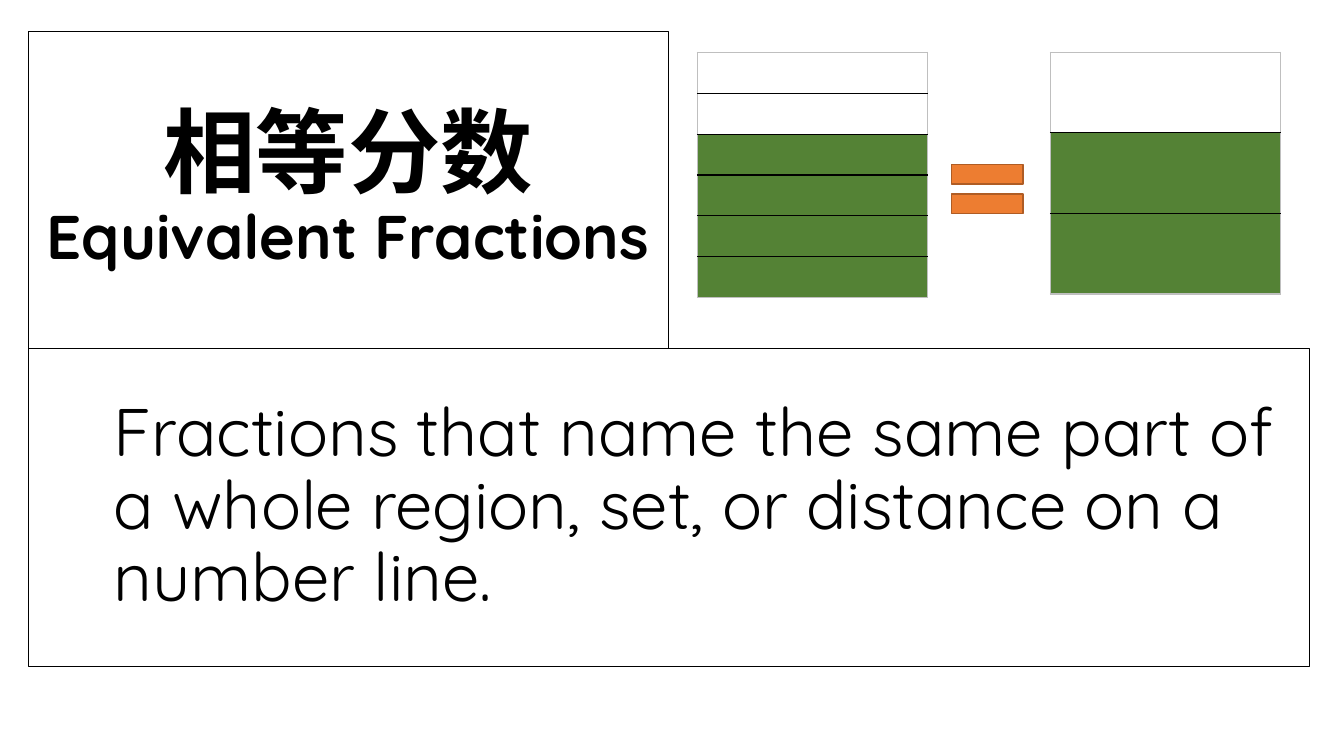
import pptx
import pptx.dml.color
import pptx.enum.shapes
import pptx.enum.text
import pptx.oxml
import pptx.oxml.ns
import pptx.util
from pptx.util import Cm

BLACK = pptx.dml.color.RGBColor(0x00, 0x00, 0x00)
GREY = pptx.dml.color.RGBColor(0xBF, 0xBF, 0xBF)
GREEN = pptx.dml.color.RGBColor(0x54, 0x82, 0x35)
ORANGE = pptx.dml.color.RGBColor(0xED, 0x7D, 0x31)
BROWN = pptx.dml.color.RGBColor(0xAF, 0x5C, 0x24)


def write_span(para, text, size, font="Quicksand", bold=False):
    span = para.add_run()
    span.text = text
    span.font.size = pptx.util.Pt(size)
    span.font.name = font
    span.font.bold = bold
    span.font.color.rgb = BLACK


def add_border(cell, side, color):
    """Draw one edge of a cell; side is L, R, T or B."""
    cell._tc.get_or_add_tcPr().append(pptx.oxml.parse_xml(
        f'<a:ln{side} {pptx.oxml.ns.nsdecls("a")} w="12700"><a:solidFill>'
        f'<a:srgbClr val="{color}"/></a:solidFill></a:ln{side}>'))


deck = pptx.Presentation()
deck.slide_width = Cm(33.87)
deck.slide_height = Cm(19.05)
page = deck.slides.add_slide(deck.slide_layouts[1])

# Framed title and definition
title = page.shapes.title
definition = page.placeholders[1]
for box, top, width in ((title, 0.79, 16.13), (definition, 8.79, 32.28)):
    box.left, box.top = Cm(0.71), Cm(top)
    box.width, box.height = Cm(width), Cm(8)
    box.line.color.rgb = BLACK
    box.line.width = pptx.util.Pt(0.75)
    frame = box.text_frame
    frame.word_wrap = True
    frame.auto_size = pptx.enum.text.MSO_AUTO_SIZE.NONE
    frame.vertical_anchor = pptx.enum.text.MSO_ANCHOR.MIDDLE
    frame.paragraphs[0].line_spacing = 0.9
    frame.paragraphs[0].space_before = pptx.util.Pt(0)

para = title.text_frame.paragraphs[0]
para.alignment = pptx.enum.text.PP_ALIGN.CENTER
write_span(para, "相等分数", 66, font="Lato", bold=True)
para.add_line_break()
write_span(para, "Equivalent Fractions", 44, bold=True)

para = definition.text_frame.paragraphs[0]
para.alignment = pptx.enum.text.PP_ALIGN.LEFT
properties = para._p.get_or_add_pPr()
properties.set("marL", str(Cm(1.9)))
properties.set("indent", "0")
properties.append(pptx.oxml.parse_xml(f'<a:buNone {pptx.oxml.ns.nsdecls("a")}/>'))
write_span(para, "Fractions that name the same part of a whole region, set, "
                 "or distance on a number line.", 48)

# Fraction bars: left, parts, shaded parts, part height
for left, parts, shaded, height in ((26.47, 3, 2, 2.03), (17.58, 6, 4, 1.03)):
    bar_frame = page.shapes.add_table(
        parts, 1, Cm(left), Cm(1.32), Cm(5.79), Cm(parts * height))
    bar = bar_frame.table
    bar.first_row = False
    bar.horz_banding = False
    for index, row in enumerate(bar.rows):
        row.height = Cm(height)
        cell = row.cells[0]
        cell.text_frame.paragraphs[0].font.size = pptx.util.Pt(12)
        add_border(cell, "L", GREY)
        add_border(cell, "R", GREY)
        add_border(cell, "T", GREY if index == 0 else BLACK)
        add_border(cell, "B", GREY if index == parts - 1 else BLACK)
        if index >= parts - shaded:
            cell.fill.solid()
            cell.fill.fore_color.rgb = GREEN
        else:
            cell.fill.background()

# Equals sign between the bars
equals = page.shapes.add_shape(
    pptx.enum.shapes.MSO_SHAPE.MATH_EQUAL, Cm(23.65), Cm(3.71), Cm(2.46), Cm(2.11))
equals.shadow.inherit = False
equals.fill.solid()
equals.fill.fore_color.rgb = ORANGE
equals.line.color.rgb = BROWN
equals.line.width = pptx.util.Pt(1)

deck.save("out.pptx")
